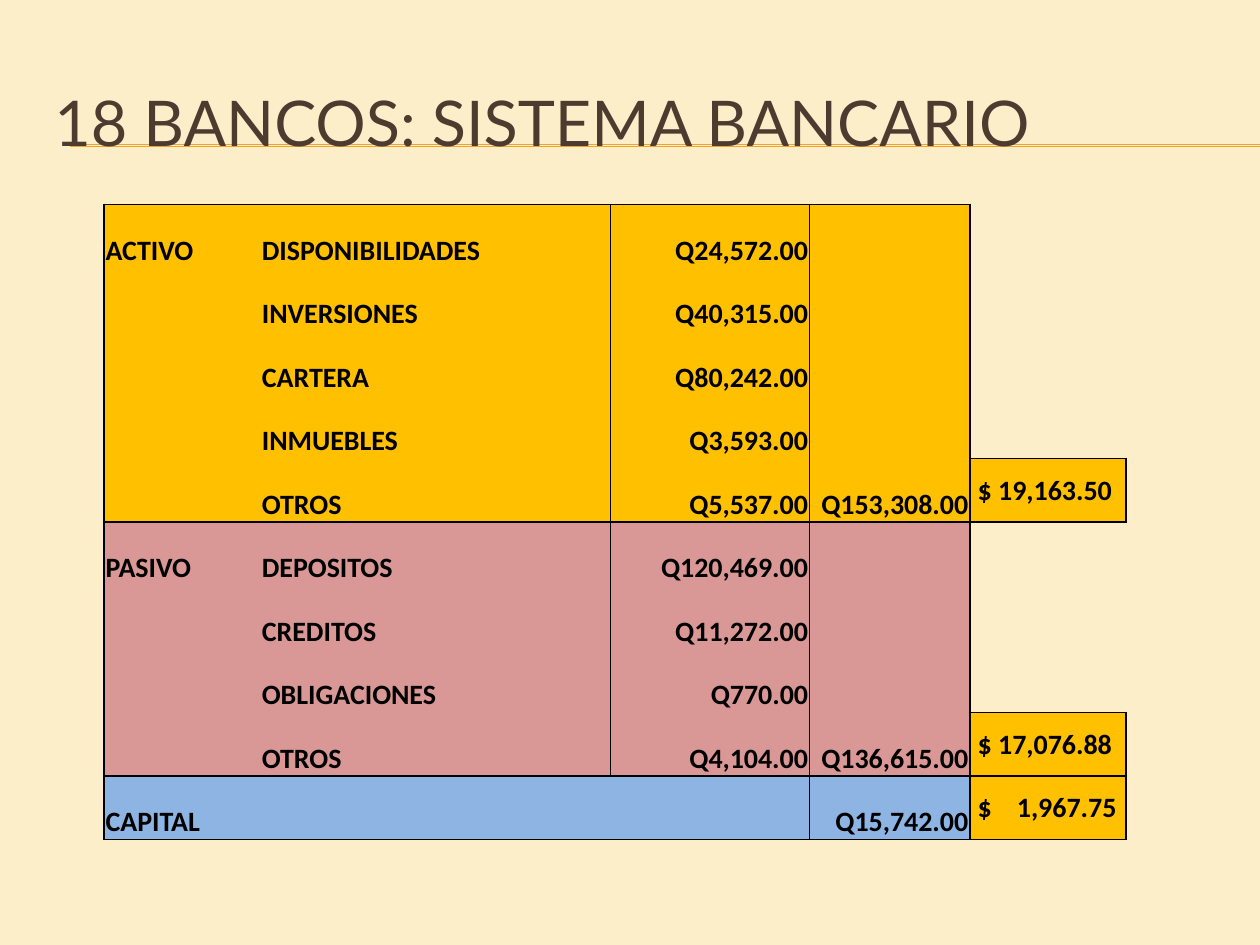
from dataclasses import dataclass

from lxml.etree import SubElement
from pptx import Presentation
from pptx.dml.color import RGBColor as Rgb
from pptx.enum.shapes import MSO_CONNECTOR as Connector
from pptx.enum.text import MSO_ANCHOR as Anchor, PP_ALIGN as Align
from pptx.oxml.ns import qn
from pptx.util import Cm, Pt


@dataclass(frozen=True)
class Theme:
    background: str = "FBEEC9"
    accent: str = "F0A22E"
    heading: str = "4E3B30"
    ink: str = "000000"
    gold: str = "FFC000"
    rose: str = "D99795"
    blue: str = "8DB4E3"
    heading_font: str = "Lato"
    body_font: str = "Calibri"
    heading_size: int = 36
    body_size: int = 16
    rule_width: float = 0.75
    border_width: float = 1


THEME = Theme()
COLUMN_WIDTHS = (3.15, 7.06, 4.01, 3.23, 3.15)
ROW_HEIGHT = 1.28
LABEL, ITEM, AMOUNT, TOTAL, DOLLARS = range(5)


@dataclass(frozen=True)
class Section:
    label: str
    fill: str
    items: tuple
    total: str
    dollars: str

    def rows(self):
        items = self.items or (("", ""),)
        last = len(items) - 1
        return [
            (
                "" if i else self.label,
                item,
                amount,
                self.total if i == last else "",
                self.dollars if i == last else "",
            )
            for i, (item, amount) in enumerate(items)
        ]

    def block(self, column, is_last_row):
        if column == DOLLARS:
            return (self.label, "dollars", THEME.gold) if is_last_row else None
        if column == TOTAL:
            return self.label, "total", self.fill
        if column == AMOUNT and self.items:
            return self.label, "amounts", self.fill
        return self.label, "items", self.fill


SECTIONS = (
    Section(
        "ACTIVO",
        THEME.gold,
        (
            ("DISPONIBILIDADES", "Q24,572.00"),
            ("INVERSIONES", "Q40,315.00"),
            ("CARTERA", "Q80,242.00"),
            ("INMUEBLES", "Q3,593.00"),
            ("OTROS", "Q5,537.00"),
        ),
        "Q153,308.00",
        "$ 19,163.50",
    ),
    Section(
        "PASIVO",
        THEME.rose,
        (
            ("DEPOSITOS", "Q120,469.00"),
            ("CREDITOS", "Q11,272.00"),
            ("OBLIGACIONES", "Q770.00"),
            ("OTROS", "Q4,104.00"),
        ),
        "Q136,615.00",
        "$ 17,076.88",
    ),
    Section("CAPITAL", THEME.blue, (), "Q15,742.00", "$\t1,967.75"),
)


def style_font(font, name, size, color, bold=False):
    font.name = name
    font.size = Pt(size)
    font.bold = bold
    font.color.rgb = Rgb.from_string(color)


def write_title(slide, text):
    title = slide.shapes.title
    title.left, title.top, title.width, title.height = Cm(0.84), Cm(1.27), Cm(24.13), Cm(2.34)
    title.text_frame.text = text
    title.text_frame.vertical_anchor = Anchor.MIDDLE
    heading = title.text_frame.paragraphs[0]
    heading.alignment = Align.LEFT
    style_font(heading.font, THEME.heading_font, THEME.heading_size, THEME.heading)


def add_rule(slide, top):
    rule = slide.shapes.add_connector(Connector.STRAIGHT, Cm(1.42), Cm(top), Cm(25.4), Cm(top))
    rule.line.color.rgb = Rgb.from_string(THEME.accent)
    rule.line.width = Pt(THEME.rule_width)
    SubElement(rule.element.spPr, qn("a:effectLst"))
    slide.shapes.title.element.addprevious(rule.element)


def set_border(cell, side, visible):
    properties = cell._tc.get_or_add_tcPr()
    border = SubElement(properties, qn(f"a:ln{side}"), w=str(Pt(THEME.border_width)))
    if visible:
        fill = SubElement(border, qn("a:solidFill"))
        SubElement(fill, qn("a:srgbClr"), val=THEME.ink)
    else:
        SubElement(border, qn("a:noFill"))


def set_tab(paragraph, position):
    properties = paragraph._p.get_or_add_pPr()
    stops = SubElement(properties, qn("a:tabLst"))
    SubElement(stops, qn("a:tab"), pos=str(position), algn="l")


def write_cell(cell, text, column):
    cell.margin_left = Cm(0.16 if column == DOLLARS else 0.03)
    cell.margin_right = cell.margin_top = Cm(0.03)
    cell.margin_bottom = 0
    cell.vertical_anchor = Anchor.MIDDLE if column == DOLLARS else Anchor.BOTTOM
    cell.text = text
    paragraph = cell.text_frame.paragraphs[0]
    paragraph.alignment = Align.RIGHT if column in (AMOUNT, TOTAL) else Align.LEFT
    if "\t" in text:
        set_tab(paragraph, Cm(0.79))
    style_font(paragraph.font, THEME.body_font, THEME.body_size, THEME.ink, bold=True)


def paint_cell(cell, block):
    if block:
        cell.fill.solid()
        cell.fill.fore_color.rgb = Rgb.from_string(block[-1])
    else:
        cell.fill.background()


def add_balance(slide, sections):
    rows, blocks = [], {}
    for section in sections:
        section_rows = section.rows()
        for i, row in enumerate(section_rows, 1):
            for column in range(len(COLUMN_WIDTHS)):
                blocks[len(rows), column] = section.block(column, i == len(section_rows))
            rows.append(row)

    balance = slide.shapes.add_table(
        len(rows), len(COLUMN_WIDTHS), Cm(2.1), Cm(4.12),
        Cm(sum(COLUMN_WIDTHS)), Cm(ROW_HEIGHT * len(rows)),
    ).table
    balance.first_row = balance.horz_banding = False
    for column, width in zip(balance.columns, COLUMN_WIDTHS):
        column.width = Cm(width)
    for row in balance.rows:
        row.height = Cm(ROW_HEIGHT)

    neighbours = {"L": (0, -1), "R": (0, 1), "T": (-1, 0), "B": (1, 0)}
    for (row, column), block in blocks.items():
        cell = balance.cell(row, column)
        write_cell(cell, rows[row][column], column)
        for side, (down, right) in neighbours.items():
            set_border(cell, side, block != blocks.get((row + down, column + right)))
        paint_cell(cell, block)


def main():
    deck = Presentation()
    deck.slide_width, deck.slide_height = Cm(25.4), Cm(19.05)
    slide = deck.slides.add_slide(deck.slide_layouts[5])
    slide.background.fill.solid()
    slide.background.fill.fore_color.rgb = Rgb.from_string(THEME.background)
    write_title(slide, "18 BANCOS: SISTEMA BANCARIO")
    for top in (2.92, 2.95):
        add_rule(slide, top)
    add_balance(slide, SECTIONS)
    deck.save("out.pptx")


if __name__ == "__main__":
    main()
